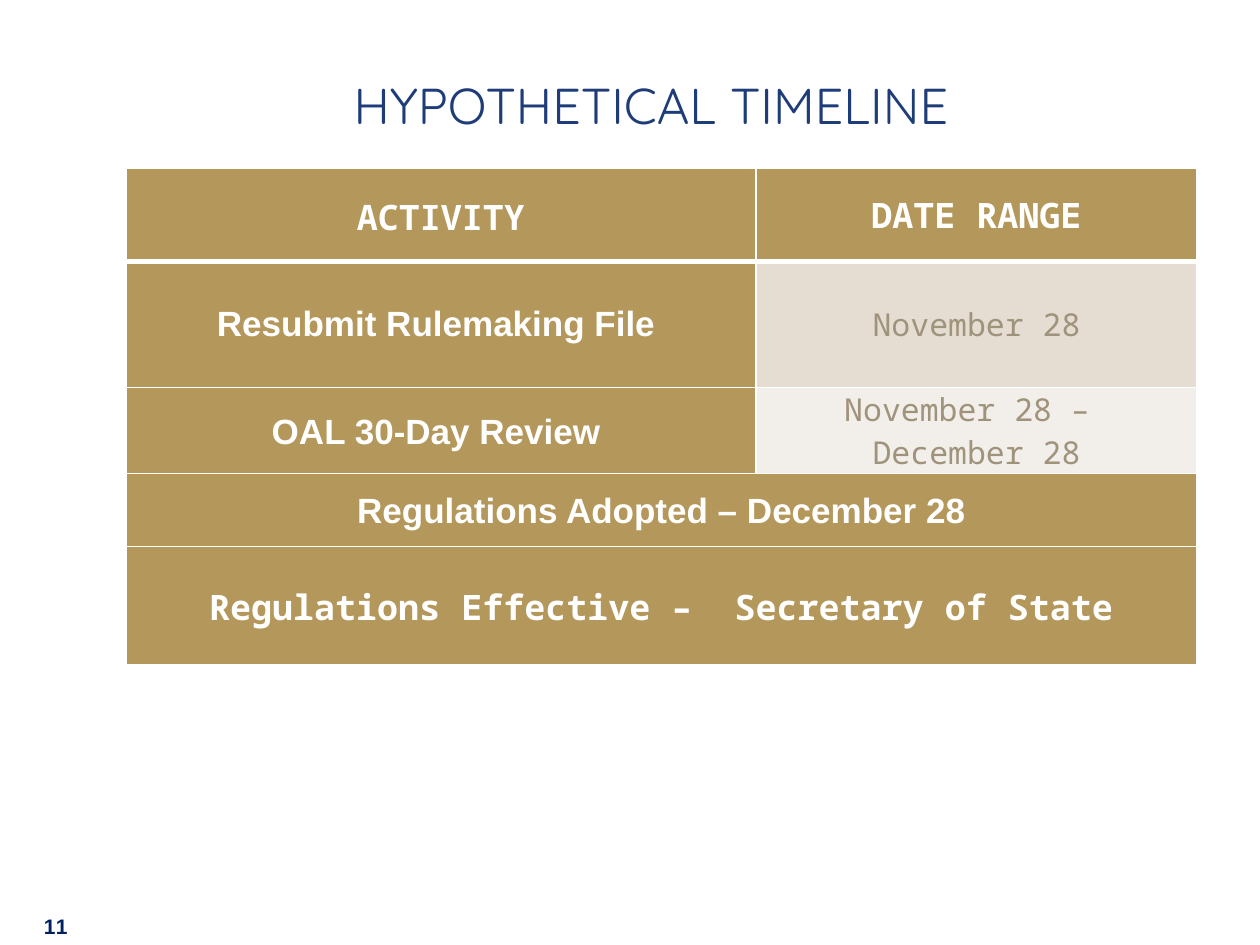
import pptx
import pptx.dml.color
import pptx.enum.text
import pptx.oxml
import pptx.oxml.ns
import pptx.util

Pt = pptx.util.Pt
ANCHOR = pptx.enum.text.MSO_ANCHOR
ALIGN = pptx.enum.text.PP_ALIGN
COLORS = {"white": "FFFFFF", "gold": "B4975A", "sand": "E5DDD2", "cream": "F2EFEA",
          "taupe": "A0937C", "navy": "002060", "blue": "1E3C78"}
SANS, MONO, DISPLAY = "Arial", "Noto Sans Mono", "Quicksand"
COLUMN_WIDTHS = [360, 252]
ROW_HEIGHTS = [53.5, 72, 49, 41.8, 67.4]
HEADING = {"size": 20, "color": "white", "bold": True, "spacing": 1.07}
DATE = {"font": MONO, "size": 18, "color": "taupe"}
ROWS = [
    [("ACTIVITY", "gold", {**HEADING, "font": MONO}),
     ("DATE RANGE", "gold", {**HEADING, "font": MONO, "spacing": None})],
    [("Resubmit Rulemaking File ", "gold", {**HEADING, "font": SANS, "spacing": None}),
     ("November 28", "sand", DATE)],
    [("OAL 30-Day Review ", "gold", {**HEADING, "font": SANS}),
     ("November 28 – \nDecember 28", "cream", DATE)],
    [("Regulations Adopted – December 28", "gold", {**HEADING, "font": SANS})],
    [("Regulations Effective –  Secretary of State", "gold", {**HEADING, "font": MONO})],
]


def rgb(name):
    """Return the named colour."""
    return pptx.dml.color.RGBColor.from_string(COLORS[name])


def write_text(frame, text, font, size, color, bold=False, align=ALIGN.CENTER,
               spacing=None, **run_attributes):
    """Write one paragraph for each line of text and format it."""
    frame.text = text
    for paragraph in frame.paragraphs:
        paragraph.alignment = align
        paragraph.line_spacing = spacing
        for run in paragraph.runs:
            run.font.name = font
            run.font.size = Pt(size)
            run.font.bold = bold
            run.font.color.rgb = rgb(color)
            for name, value in run_attributes.items():
                run.font._element.set(name, value)


def set_borders(cell, bottom_width):
    """Draw white borders around a cell."""
    properties = cell._tc.get_or_add_tcPr()
    widths = {"lnL": 1, "lnR": 1, "lnT": 1, "lnB": bottom_width}
    for position, (tag, width) in enumerate(widths.items()):
        line = pptx.oxml.parse_xml(
            f'<a:{tag} {pptx.oxml.ns.nsdecls("a")} w="{Pt(width)}"><a:solidFill>'
            f'<a:srgbClr val="{COLORS["white"]}"/></a:solidFill></a:{tag}>')
        properties.insert(position, line)


def add_title(slide, left, top, width, height):
    """Place and format the slide title."""
    title = slide.shapes.title
    title.left, title.top, title.width, title.height = map(Pt, (left, top, width, height))
    frame = title.text_frame
    frame.vertical_anchor = ANCHOR.MIDDLE
    frame.word_wrap = True
    frame.margin_left = frame.margin_right = Pt(7.2)
    frame.margin_top = frame.margin_bottom = 0
    write_text(frame, "hypothetical timeline ", DISPLAY, 36, "blue", cap="small")
    indent = frame.paragraphs[0]._p.get_or_add_pPr()
    indent.set("marL", str(Pt(31.7)))
    indent.set("indent", "0")


def add_timeline(slide, left, top, width, height):
    """Build the timeline table, with short rows merged across."""
    table = slide.shapes.add_table(len(ROWS), len(COLUMN_WIDTHS),
                                   *map(Pt, (left, top, width, height))).table
    for column, column_width in zip(table.columns, COLUMN_WIDTHS):
        column.width = Pt(column_width)
    for index, (row, row_height, entries) in enumerate(zip(table.rows, ROW_HEIGHTS, ROWS)):
        row.height = Pt(row_height)
        if len(entries) == 1:
            table.cell(index, 0).merge(table.cell(index, len(COLUMN_WIDTHS) - 1))
        for cell, (text, fill, text_format) in zip(row.cells, entries):
            cell.vertical_anchor = ANCHOR.MIDDLE
            cell.margin_left = cell.margin_right = Pt(3.6)
            cell.margin_top = cell.margin_bottom = 0
            cell.fill.solid()
            cell.fill.fore_color.rgb = rgb(fill)
            write_text(cell.text_frame, text, **text_format)
        for cell in row.cells:
            set_borders(cell, 3 if index == 0 else 1)


def add_page_number(slide, left, top, width, height):
    """Place the page number."""
    frame = slide.shapes.add_textbox(*map(Pt, (left, top, width, height))).text_frame
    frame.word_wrap = True
    frame.vertical_anchor = ANCHOR.BOTTOM
    write_text(frame, "11", SANS, 12, "navy", bold=True, align=ALIGN.LEFT, spc="80")


def main():
    """Build the presentation."""
    presentation = pptx.Presentation()
    presentation.slide_width, presentation.slide_height = Pt(720), Pt(540)
    slide = presentation.slides.add_slide(presentation.slide_layouts[5])
    add_title(slide, 0, 24, 720, 66)
    add_timeline(slide, 72, 96, sum(COLUMN_WIDTHS), sum(ROW_HEIGHTS))
    add_page_number(slide, 18, 504, 120, 36)
    presentation.save("out.pptx")


if __name__ == "__main__":
    main()
